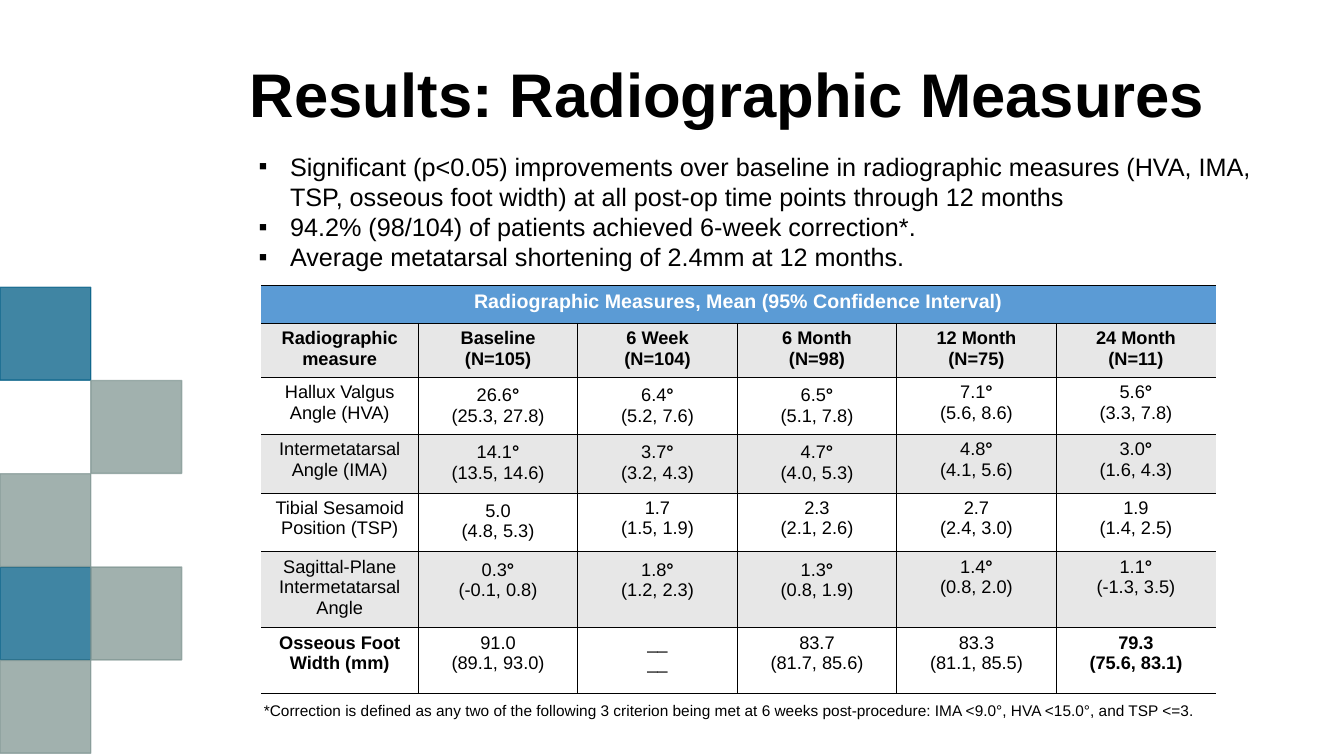
from dataclasses import dataclass

from lxml.etree import SubElement
from pptx import Presentation
from pptx.dml.color import RGBColor
from pptx.enum.shapes import MSO_SHAPE
from pptx.enum.text import MSO_ANCHOR, PP_ALIGN
from pptx.oxml import parse_xml
from pptx.oxml.ns import nsdecls, qn
from pptx.slide import Slide
from pptx.table import _Cell
from pptx.text.text import TextFrame, _Paragraph
from pptx.util import Cm, Pt

BLACK = RGBColor(0x00, 0x00, 0x00)
WHITE = RGBColor(0xFF, 0xFF, 0xFF)
BLUE = RGBColor(0x00, 0x5D, 0x85)
SAGE = RGBColor(0x82, 0x97, 0x94)
HEADER_BLUE = RGBColor(0x5B, 0x9B, 0xD5)
BAND_GRAY = RGBColor(0xE7, 0xE7, 0xE7)

SQUARE_WIDTH, SQUARE_HEIGHT = 2.29, 2.34
SQUARE_TOP, SQUARE_STEP = 7.24, 2.35
COLUMN_WIDTHS = [3.96] + [4.02] * 5
ROW_HEIGHTS = [0.96, 1.31, 1.42, 1.48, 1.48, 1.84, 1.66]


@dataclass
class Square:
    column: int
    row: int
    color: RGBColor


@dataclass
class Measure:
    name: str
    values: list[str]
    unit: str = ""
    loose_columns: int = 0


SQUARES = [
    Square(0, 0, BLUE),
    Square(0, 3, BLUE),
    Square(0, 4, SAGE),
    Square(1, 1, SAGE),
    Square(1, 3, SAGE),
    Square(0, 2, SAGE),
]

BULLETS = [
    "Significant (p<0.05) improvements over baseline in radiographic measures (HVA, IMA, TSP, osseous foot width) at all post-op time points through 12 months",
    "94.2% (98/104) of patients achieved 6-week correction*.",
    "Average metatarsal shortening of 2.4mm at 12 months.",
]

TABLE_TITLE = "Radiographic Measures, Mean (95% Confidence Interval)"
HEADINGS = [
    "Radiographic measure",
    "Baseline (N=105)",
    "6 Week\n(N=104)",
    "6 Month\n(N=98)",
    "12 Month\n(N=75)",
    "24 Month\n(N=11)",
]
MEASURES = [
    Measure(
        "Hallux Valgus Angle (HVA)",
        ["26.6\n(25.3, 27.8)", "6.4\n(5.2, 7.6)", "6.5\n(5.1, 7.8)", "7.1\n(5.6, 8.6)", "5.6\n(3.3, 7.8)"],
        "°", 3,
    ),
    Measure(
        "Intermetatarsal Angle (IMA)",
        ["14.1\n(13.5, 14.6)", "3.7\n(3.2, 4.3)", "4.7\n(4.0, 5.3)", "4.8\n(4.1, 5.6)", "3.0\n(1.6, 4.3)"],
        "°", 3,
    ),
    Measure(
        "Tibial Sesamoid Position (TSP)",
        ["5.0\n(4.8, 5.3)", "1.7\n(1.5, 1.9)", "2.3\n(2.1, 2.6)", "2.7\n(2.4, 3.0)", "1.9\n(1.4, 2.5)"],
        "", 1,
    ),
    Measure(
        "Sagittal-Plane Intermetatarsal Angle",
        ["0.3\n(-0.1, 0.8)", "1.8\n(1.2, 2.3)", "1.3\n(0.8, 1.9)", "1.4\n(0.8, 2.0)", "1.1\n(-1.3, 3.5)"],
        "°", 3,
    ),
    Measure(
        "Osseous Foot Width (mm)",
        ["91.0\n(89.1, 93.0)", "__\n__", "83.7\n(81.7, 85.6)", "83.3\n(81.1, 85.5)", "79.3\n(75.6, 83.1)"],
    ),
]
FOOTNOTE = "*Correction is defined as any two of the following 3 criterion being met at 6 weeks post-procedure: IMA <9.0°, HVA <15.0°, and TSP <=3."


def add_run(paragraph: _Paragraph, text: str, size: float, bold: bool = False, color: RGBColor = BLACK) -> None:
    run = paragraph.add_run()
    run.text = text
    formats = {"name": "Arial", "size": Pt(size), "bold": bold}
    for attribute, value in formats.items():
        setattr(run.font, attribute, value)
    run.font.color.rgb = color


def add_text_box(slide: Slide, left: float, top: float, width: float, height: float) -> TextFrame:
    frame = slide.shapes.add_textbox(Cm(left), Cm(top), Cm(width), Cm(height)).text_frame
    frame.word_wrap = True
    return frame


def add_square(slide: Slide, square: Square) -> None:
    shape = slide.shapes.add_shape(
        MSO_SHAPE.RECTANGLE,
        Cm(square.column * SQUARE_WIDTH),
        Cm(SQUARE_TOP + square.row * SQUARE_STEP),
        Cm(SQUARE_WIDTH),
        Cm(SQUARE_HEIGHT),
    )
    shape.shadow.inherit = False
    shape.line.width = Pt(1)
    for fill in (shape.fill, shape.line.fill):
        fill.solid()
        fill.fore_color.rgb = square.color
    for color in shape.element.spPr.iter(qn("a:srgbClr")):
        SubElement(color, qn("a:alpha"), val="75000")


def add_bullets(slide: Slide) -> None:
    frame = add_text_box(slide, 6.27, 3.68, 25.93, 3.33)
    for index, text in enumerate(BULLETS):
        paragraph = frame.paragraphs[0] if index == 0 else frame.add_paragraph()
        properties = paragraph._p.get_or_add_pPr()
        properties.set("marL", str(Cm(0.79)))
        properties.set("indent", str(Cm(-0.79)))
        SubElement(properties, qn("a:buFont"), typeface="Arial")
        SubElement(properties, qn("a:buChar"), char="▪")
        add_run(paragraph, text, 18)


def set_cell_style(cell: _Cell, sides: str, color: RGBColor) -> None:
    cell.fill.solid()
    cell.fill.fore_color.rgb = color
    properties = cell._tc.get_or_add_tcPr()
    for index, side in enumerate("LRTB"):
        fill = '<a:solidFill><a:srgbClr val="000000"/></a:solidFill>' if side in sides else "<a:noFill/>"
        border = parse_xml(f'<a:ln{side} {nsdecls("a")} w="{Pt(1)}">{fill}</a:ln{side}>')
        properties.insert(index, border)


def fill_cell(
    cell: _Cell, text: str, size: float = 13, bold: bool = False,
    color: RGBColor = BLACK, unit: str = "", loose: bool = False,
) -> None:
    for index, line in enumerate(text.split("\n")):
        paragraph = cell.text_frame.paragraphs[0] if index == 0 else cell.text_frame.add_paragraph()
        paragraph.alignment = PP_ALIGN.CENTER
        add_run(paragraph, line, size, bold, color)
        if index == 0 and unit:
            add_run(paragraph, unit, size, True, color)
        if index == 0 and loose:
            paragraph.line_spacing = 1.15


def add_measures_table(slide: Slide) -> None:
    frame = slide.shapes.add_table(
        len(ROW_HEIGHTS), len(COLUMN_WIDTHS), Cm(6.58), Cm(7.19), Cm(sum(COLUMN_WIDTHS)), Cm(sum(ROW_HEIGHTS))
    )
    table = frame.table
    table.horz_banding = False
    table.first_row = False
    for column, width in zip(table.columns, COLUMN_WIDTHS):
        column.width = Cm(width)
    last_column = len(COLUMN_WIDTHS) - 1
    for row_index, height in enumerate(ROW_HEIGHTS):
        table.rows[row_index].height = Cm(height)
        color = HEADER_BLUE if row_index == 0 else BAND_GRAY if row_index % 2 else WHITE
        for column_index in range(len(COLUMN_WIDTHS)):
            left = "L" if row_index and column_index else ""
            right = "R" if row_index and column_index < last_column else ""
            set_cell_style(table.cell(row_index, column_index), left + right + "TB", color)

    table.cell(0, 0).merge(table.cell(0, last_column))
    fill_cell(table.cell(0, 0), TABLE_TITLE, 14, True, WHITE)
    for column_index, heading in enumerate(HEADINGS):
        fill_cell(table.cell(1, column_index), heading, bold=True)
    for row_index, measure in enumerate(MEASURES, start=2):
        last_row = measure is MEASURES[-1]
        fill_cell(table.cell(row_index, 0), measure.name, bold=last_row)
        for column_index, value in enumerate(measure.values, start=1):
            fill_cell(
                table.cell(row_index, column_index), value,
                bold=last_row and column_index == last_column,
                unit=measure.unit, loose=column_index <= measure.loose_columns,
            )


def main() -> None:
    presentation = Presentation()
    presentation.slide_width, presentation.slide_height = Cm(33.87), Cm(19.05)
    slide = presentation.slides.add_slide(presentation.slide_layouts[6])
    for square in SQUARES:
        add_square(slide, square)
    title = add_text_box(slide, 6.05, 1.17, 25.5, 2.59)
    title.vertical_anchor = MSO_ANCHOR.MIDDLE
    title.paragraphs[0].line_spacing = 0.9
    add_run(title.paragraphs[0], "Results: Radiographic Measures", 44, True)
    add_measures_table(slide)
    add_bullets(slide)
    footnote = add_text_box(slide, 6.4, 17.55, 25.15, 1.07)
    add_run(footnote.paragraphs[0], FOOTNOTE, 11)
    presentation.save("out.pptx")


if __name__ == "__main__":
    main()
